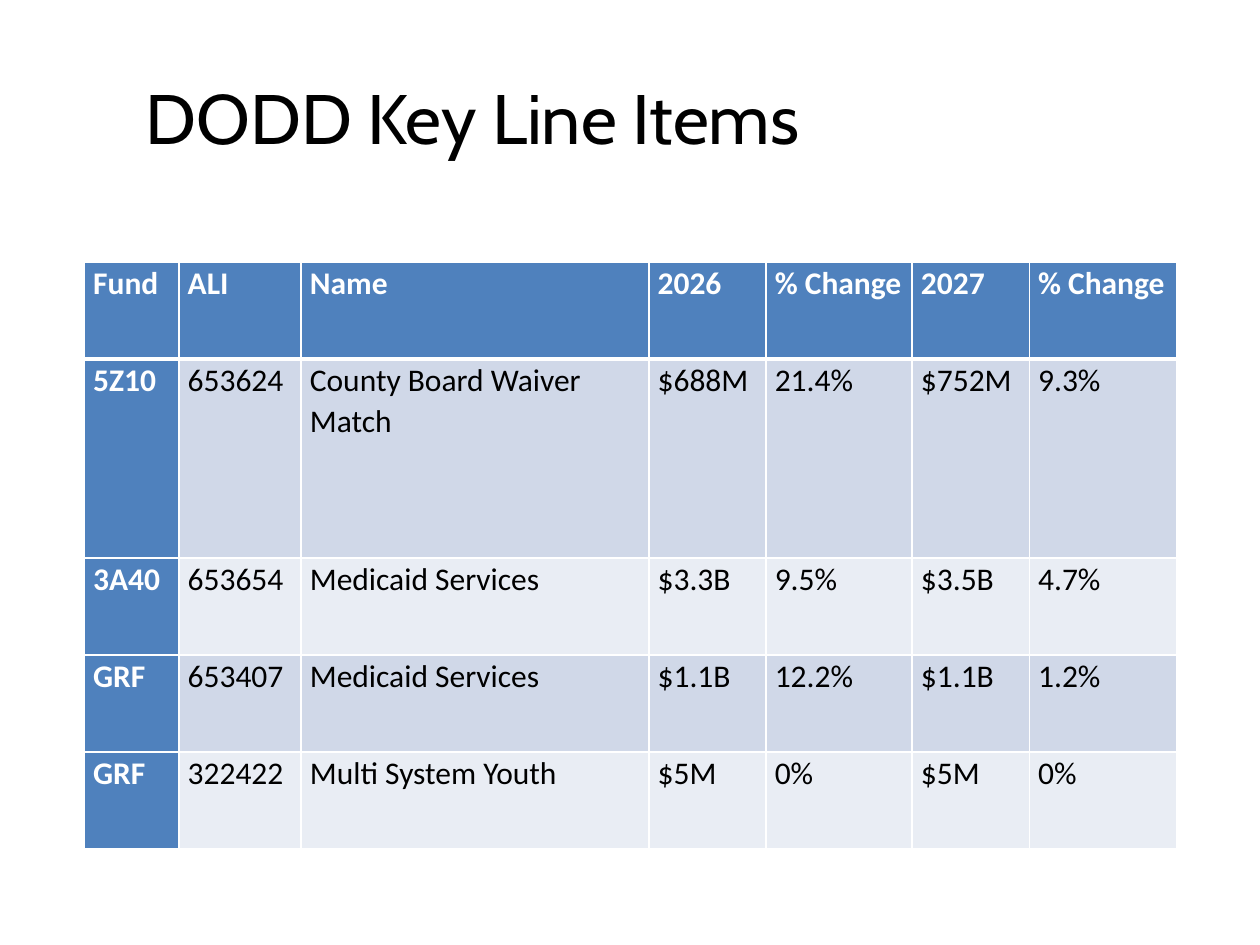
from dataclasses import dataclass

from lxml import etree
from pptx import Presentation
from pptx import util as u
from pptx.dml.color import RGBColor
from pptx.enum import text
from pptx.oxml import ns


@dataclass(frozen=True)
class Theme:
    accent: str = "4F81BD"
    band_dark: str = "D0D8E8"
    band_light: str = "E9EDF4"
    light: str = "FFFFFF"
    dark: str = "000000"
    title_font: str = "Cabin"
    body_font: str = "Calibri"
    title_size: int = 40
    body_size: int = 18
    thin_rule: int = 1
    thick_rule: int = 3


THEME = Theme()
COLUMN_WIDTHS = [0.75, 0.97, 2.76, 0.93, 1.16, 0.93, 1.17]
ROW_HEIGHTS = [0.77, 1.58, 0.77, 0.77, 0.77]
LINE_ITEMS = [
    ["Fund", "ALI", "Name", "2026", "% Change", "2027", "% Change"],
    ["5Z10", "653624", "County Board Waiver Match", "$688M", "21.4%", "$752M", "9.3%"],
    ["3A40", "653654", "Medicaid Services", "$3.3B", "9.5%", "$3.5B", "4.7%"],
    ["GRF", "653407", "Medicaid Services", "$1.1B", "12.2%", "$1.1B", "1.2%"],
    ["GRF", "322422", "Multi System Youth", "$5M", "0%", "$5M", "0%"],
]


def set_borders(cell, widths):
    """Draw the cell's edges; widths maps L, R, T, B to points, in that order."""
    properties = cell._tc.get_or_add_tcPr()
    for position, (side, width) in enumerate(widths.items()):
        line = etree.Element(ns.qn(f"a:ln{side}"), w=str(u.Pt(width)))
        fill = etree.SubElement(line, ns.qn("a:solidFill"))
        etree.SubElement(fill, ns.qn("a:srgbClr"), val=THEME.light)
        properties.insert(position, line)


presentation = Presentation()
presentation.slide_width, presentation.slide_height = u.Inches(10), u.Inches(7.5)
slide = presentation.slides.add_slide(presentation.slide_layouts[5])

title = slide.shapes.title
title.left, title.top = u.Inches(0.5), u.Inches(0.3)
title.width, title.height = u.Inches(6.5), u.Inches(1.25)
title.text_frame.text = "DODD Key Line Items"
title.text_frame.vertical_anchor = text.MSO_ANCHOR.MIDDLE
paragraph = title.text_frame.paragraphs[0]
paragraph.alignment = text.PP_ALIGN.CENTER
paragraph.font.name = THEME.title_font
paragraph.font.size = u.Pt(THEME.title_size)
paragraph.font.color.rgb = RGBColor.from_string(THEME.dark)

table = slide.shapes.add_table(
    len(ROW_HEIGHTS), len(COLUMN_WIDTHS), u.Inches(0.67), u.Inches(2.08),
    u.Inches(sum(COLUMN_WIDTHS)), u.Inches(sum(ROW_HEIGHTS))).table
table.first_col = True
for column, width in zip(table.columns, COLUMN_WIDTHS):
    column.width = u.Inches(width)
for row, height in zip(table.rows, ROW_HEIGHTS):
    row.height = u.Inches(height)

for row_index, values in enumerate(LINE_ITEMS):
    band = THEME.band_dark if row_index % 2 else THEME.band_light
    for column_index, value in enumerate(values):
        is_heading = row_index == 0 or column_index == 0
        cell = table.cell(row_index, column_index)
        cell.text = value
        cell.margin_left = cell.margin_right = u.Inches(0.07)
        cell.margin_top = cell.margin_bottom = 0
        cell.fill.solid()
        cell.fill.fore_color.rgb = RGBColor.from_string(THEME.accent if is_heading else band)
        set_borders(cell, {
            "L": THEME.thin_rule,
            "R": THEME.thin_rule,
            "T": THEME.thick_rule if row_index == 1 else THEME.thin_rule,
            "B": THEME.thick_rule if row_index == 0 else THEME.thin_rule,
        })
        paragraph = cell.text_frame.paragraphs[0]
        paragraph.line_spacing = 1.07
        paragraph.font.name = THEME.body_font
        paragraph.font.size = u.Pt(THEME.body_size)
        paragraph.font.bold = is_heading
        paragraph.font.color.rgb = RGBColor.from_string(THEME.light if is_heading else THEME.dark)

presentation.save("out.pptx")
